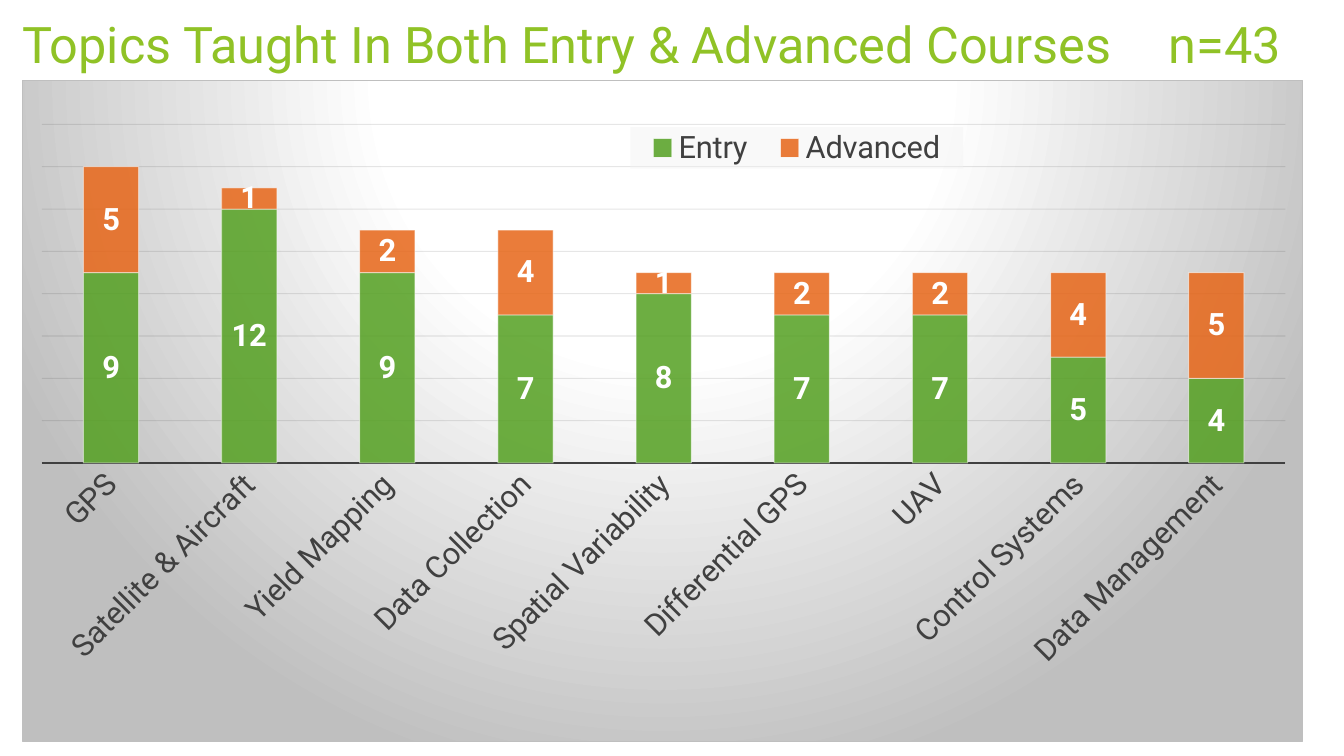
from lxml.etree import SubElement
from pptx import Presentation
from pptx.chart.data import CategoryChartData
from pptx.dml.color import RGBColor
from pptx.enum.chart import (XL_CHART_TYPE, XL_LABEL_POSITION as LabelPosition,
                             XL_LEGEND_POSITION, XL_TICK_MARK as TickMark)
from pptx.enum.text import MSO_ANCHOR, PP_ALIGN
from pptx.oxml import parse_xml
from pptx.oxml.ns import nsdecls, qn
from pptx.util import Inches, Pt

FONT = "Roboto"
LIME, GRAY, DARK, WHITE = "90C226", "BFBFBF", "404040", "FFFFFF"
TOPICS = ["GPS", "Satellite & Aircraft", "Yield Mapping", "Data Collection",
          "Spatial Variability", "Differential GPS", "UAV", "Control Systems",
          "Data Management"]
COURSES = [("Entry", "54A021", [9, 12, 9, 7, 8, 7, 7, 5, 4]),
           ("Advanced", "E76618", [5, 1, 2, 4, 1, 2, 2, 4, 5])]


def rgb(color):
    return RGBColor.from_string(color)


def style_font(font, size, color, bold=False):
    font.name, font.size, font.bold = FONT, Pt(size), bold
    font.color.rgb = rgb(color)


def style_line(line, color, width):
    line.color.rgb = rgb(color)
    line.width = Pt(width)


def set_opacity(element, query, percent):
    for color in element.xpath(query):
        SubElement(color, qn("a:alpha")).set("val", str(percent * 1000))


def manual_layout(left, top, width, height, inner=False):
    target = '<c:layoutTarget val="inner"/>' if inner else ""
    return parse_xml(
        f'<c:layout {nsdecls("c")}><c:manualLayout>{target}'
        '<c:xMode val="edge"/><c:yMode val="edge"/>'
        f'<c:x val="{left}"/><c:y val="{top}"/>'
        f'<c:w val="{width}"/><c:h val="{height}"/>'
        '</c:manualLayout></c:layout>')


def add_title(slide, left, top, width, height):
    title = slide.shapes.title
    title.left, title.top, title.width, title.height = left, top, width, height
    frame = title.text_frame
    frame.word_wrap = True
    frame.vertical_anchor = MSO_ANCHOR.TOP
    frame.text = "Topics Taught In Both Entry & Advanced Courses\tn=43"
    paragraph = frame.paragraphs[0]
    paragraph.alignment = PP_ALIGN.LEFT
    paragraph.line_spacing = 1.0
    style_font(paragraph.font, 36, LIME)
    tabs = parse_xml(f'<a:tabLst {nsdecls("a")}>'
                     f'<a:tab pos="{Inches(11.37)}" algn="l"/></a:tabLst>')
    paragraph.font._element.addprevious(tabs)


def style_background(chart):
    """Radial white-to-gray fill with a thin gray border."""
    stops = "".join(
        f'<a:gs pos="{position * 1000}"><a:srgbClr val="{color}"/></a:gs>'
        for position, color in [(0, WHITE), (39, WHITE), (100, GRAY)])
    chart._chartSpace.find(qn("c:chart")).addnext(parse_xml(
        f'<c:spPr {nsdecls("c", "a")}><a:gradFill><a:gsLst>{stops}</a:gsLst>'
        '<a:path path="circle"><a:fillToRect l="50000" t="-80000" r="50000"'
        ' b="180000"/></a:path></a:gradFill>'
        f'<a:ln w="{Pt(0.75)}"><a:solidFill><a:srgbClr val="{GRAY}"/>'
        '</a:solidFill></a:ln></c:spPr>'))


def style_axes(chart):
    topics = chart.category_axis
    topics.major_tick_mark = topics.minor_tick_mark = TickMark.NONE
    style_font(topics.tick_labels.font, 22, DARK)
    style_line(topics.format.line, DARK, 1.5)
    topics._element.xpath("c:txPr/a:bodyPr")[0].set("rot", str(-45 * 60000))

    counts = chart.value_axis
    counts.visible = False
    counts.minimum_scale, counts.maximum_scale, counts.major_unit = 0, 16, 2
    counts.has_major_gridlines = True
    style_line(counts.major_gridlines.format.line, "0D0D0D", 0.75)
    set_opacity(counts._element, "c:majorGridlines//a:srgbClr", 10)


def style_bars(plot):
    plot.gap_width, plot.overlap = 150, 100
    plot.vary_by_categories = False
    for series, (_, color, _) in zip(plot.series, COURSES):
        series.format.fill.solid()
        series.format.fill.fore_color.rgb = rgb(color)
        style_line(series.format.line, WHITE, 0.75)
        set_opacity(series._element, "c:spPr/a:solidFill/a:srgbClr", 85)
        set_opacity(series._element, "c:spPr/a:ln//a:srgbClr", 50)
        labels = series.data_labels
        labels.show_value = True
        labels.position = LabelPosition.CENTER
        style_font(labels.font, 22, WHITE, bold=True)


def style_legend(chart):
    chart.has_legend = True
    legend = chart.legend
    legend.position = XL_LEGEND_POSITION.BOTTOM
    legend.include_in_layout = False
    style_font(legend.font, 22, DARK)
    element = legend._element
    for layout in element.findall(qn("c:layout")):
        element.remove(layout)
    element.find(qn("c:legendPos")).addnext(
        manual_layout(0.475, 0.071, 0.26, 0.063))
    element.find(qn("c:overlay")).addnext(parse_xml(
        f'<c:spPr {nsdecls("c", "a")}><a:solidFill><a:srgbClr val="F2F2F2">'
        '<a:alpha val="39000"/></a:srgbClr></a:solidFill></c:spPr>'))


def add_topics_chart(slide, left, top, width, height):
    data = CategoryChartData()
    data.categories = TOPICS
    for name, _, values in COURSES:
        data.add_series(name, values)
    chart = slide.shapes.add_chart(XL_CHART_TYPE.COLUMN_STACKED, left, top,
                                   width, height, data).chart
    chart.has_title = False
    style_font(chart.font, 10, "000000")
    style_background(chart)
    style_axes(chart)
    style_bars(chart.plots[0])
    style_legend(chart)
    plot_area = chart._chartSpace.xpath("c:chart/c:plotArea")[0]
    for layout in plot_area.findall(qn("c:layout")):
        plot_area.remove(layout)
    plot_area.insert(0, manual_layout(0.015, 0.067, 0.972, 0.512, inner=True))


def main():
    presentation = Presentation()
    presentation.slide_width = Inches(13.33)
    presentation.slide_height = Inches(7.5)
    slide = presentation.slides.add_slide(presentation.slide_layouts[5])
    add_title(slide, Inches(0.12), Inches(0.08), Inches(12.8), Inches(1.44))
    add_topics_chart(slide, Inches(0.22), Inches(0.79),
                     Inches(12.7), Inches(6.57))
    presentation.save("out.pptx")


if __name__ == "__main__":
    main()
